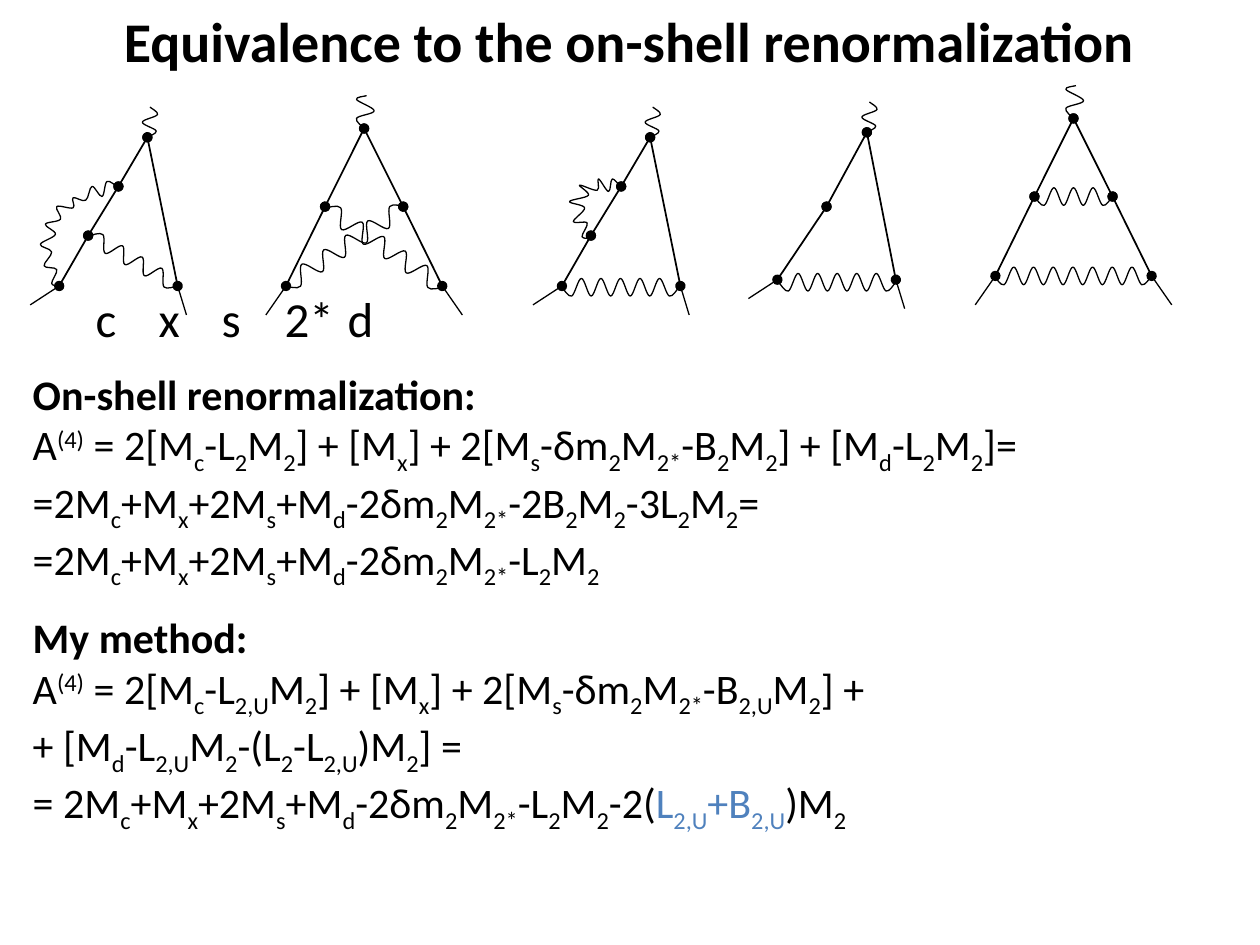
from dataclasses import dataclass
from math import hypot

from lxml import etree
from pptx import Presentation, util as u
from pptx.dml.color import RGBColor
from pptx.enum import shapes, text
from pptx.oxml.ns import qn


@dataclass
class Theme:
    font: str = "Calibri"
    ink: RGBColor = RGBColor(0, 0, 0)
    blue: RGBColor = RGBColor(0x4F, 0x81, 0xBD)
    title: int = 32
    label: int = 28
    body: int = 24
    gap: int = 12
    bold: float = 1
    thin: float = 0.75


def size(x):
    """Turn a drawing unit (one tenth of the slide width) into a length."""
    return u.Cm(2.54 * x)


def add(a, b):
    return a[0] + b[0], a[1] + b[1]


def zigzag(start, end, turns, amp):
    """Turning points of a wave on a straight axis; amp > 0 first turns down."""
    dx, dy = end[0] - start[0], end[1] - start[1]
    span = hypot(dx, dy)
    points = [start]
    for i in range(1, turns + 1):
        t, side = i / (turns + 1), amp if i % 2 else -amp
        points.append((start[0] + t * dx - side * dy / span,
                       start[1] + t * dy + side * dx / span))
    return points + [end]


def bend(shape):
    """Turn the straight segments of a freeform into one smooth curve."""
    geom = shape._element.spPr
    points = [(int(p.get("x")), int(p.get("y"))) for p in geom.iter(qn("a:pt"))]
    ends = [points[0], *points, points[-1]]
    steps = list(geom.iter(qn("a:lnTo")))
    for step, a, b, c, d in zip(steps, ends, ends[1:], ends[2:], ends[3:]):
        step.tag = qn("a:cubicBezTo")
        hints = [[q + (r - p) / 6 for p, q, r in zip(a, b, c)],
                 [q - (r - p) / 6 for p, q, r in zip(b, c, d)]]
        for i, (x, y) in enumerate(hints):
            point = etree.Element(qn("a:pt"), x=str(round(x)), y=str(round(y)))
            step.insert(i, point)


class Deck:
    def __init__(self, theme):
        self.theme = theme
        self.file = Presentation()
        self.file.slide_width, self.file.slide_height = size(10), size(7.5)
        self.slide = self.file.slides.add_slide(self.file.slide_layouts[1])

    def place(self, shape, box, anchor):
        shape.left, shape.top, shape.width, shape.height = map(size, box)
        frame = shape.text_frame
        frame.word_wrap = True
        frame.auto_size = text.MSO_AUTO_SIZE.NONE
        frame.vertical_anchor = anchor
        return frame

    def style(self, run, points, bold=False, color=None):
        font = run.font
        font.name, font.size, font.bold = self.theme.font, u.Pt(points), bold
        font.color.rgb = color or self.theme.ink

    def title(self, words, box):
        frame = self.place(self.slide.shapes.title, box, text.MSO_ANCHOR.MIDDLE)
        frame.text = words
        para = frame.paragraphs[0]
        para.alignment = text.PP_ALIGN.CENTER
        self.style(para.runs[0], self.theme.title, True)

    def body(self, box):
        self.frame = self.place(self.slide.placeholders[1], box,
                                text.MSO_ANCHOR.TOP)
        self.fresh = True

    def para(self, before=0):
        para = self.frame.paragraphs[0] if self.fresh else self.frame.add_paragraph()
        self.fresh = False
        para.space_before = u.Pt(before)
        props = para._p.get_or_add_pPr()
        props.set("marL", "0")
        props.set("indent", "0")
        etree.SubElement(props, qn("a:buNone"))
        return para

    def labels(self, names, stops):
        para = self.para()
        para.text = "".join("\t" + name for name in names)
        self.style(para.runs[0], self.theme.label)
        tabs = etree.SubElement(para._p.pPr, qn("a:tabLst"))
        for stop in stops:
            etree.SubElement(tabs, qn("a:tab"), pos=str(size(stop)), algn="ctr")

    def head(self, words):
        para = self.para(self.theme.gap)
        para.text = words
        self.style(para.runs[0], self.theme.body, True)

    def formula(self, code):
        """Write {x} as a subscript, {^x} as a superscript and |x| in blue."""
        para = self.para()
        for i, part in enumerate(code.split("|")):
            color = self.theme.blue if i % 2 else self.theme.ink
            for j, bit in enumerate(part.replace("}", "{").split("{")):
                if not bit:
                    continue
                run = para.add_run()
                run.text = bit.lstrip("^")
                self.style(run, self.theme.body, color=color)
                if j % 2:
                    base = "30000" if bit[0] == "^" else "-25000"
                    run.font._element.set("baseline", base)

    def stroke(self, shape, width):
        shape.line.color.rgb = self.theme.ink
        shape.line.width = u.Pt(width)

    def line(self, start, end, dots=False):
        link = self.slide.shapes.add_connector(
            shapes.MSO_CONNECTOR.STRAIGHT, *map(size, start + end))
        self.stroke(link, self.theme.bold if dots else self.theme.thin)
        if dots:
            pen = link.line._get_or_add_ln()
            for tip in "a:headEnd", "a:tailEnd":
                etree.SubElement(pen, qn(tip), type="oval")
        etree.SubElement(link._element.spPr, qn("a:effectLst"))

    def wave(self, points):
        turns = [tuple(map(size, p)) for p in points]
        pen = self.slide.shapes.build_freeform(*turns[0])
        pen.add_line_segments(turns[1:], close=False)
        shape = pen.convert_to_shape()
        bend(shape)
        shape.fill.background()
        shape.shadow.inherit = False
        self.stroke(shape, self.theme.thin)

    def graph(self, apex, sides, legs, waves):
        """Draw a vertex diagram; all points are offsets from its apex."""
        for side, leg in zip(sides, legs):
            chain = [apex] + [add(apex, p) for p in side]
            for start, end in zip(chain, chain[1:]):
                self.line(start, end, True)
            self.line(chain[-1], add(chain[-1], leg))
        for points in waves:
            self.wave([add(apex, p) for p in points])


LEAN = [[(-.23, .39), (-.47, .78), (-.7, 1.18)], [(.24, 1.18)]]
STAR = [[(-.32, .59), (-.71, 1.17)], [(.23, 1.17)]]
EVEN = [[(s * .31, .62), (s * .62, 1.25)] for s in (-1, 1)]
SKEW_LEGS = [(-.23, .15), (.07, .23)]
EVEN_LEGS = [(-.16, .23), (.16, .23)]
SKEW_TAIL = [(0, 0), (.07, -.05), (-.04, -.12), (.08, -.18), (.02, -.24)]
EVEN_TAIL = [(0, 0), (-.06, -.08), (.08, -.14), (-.06, -.23), (.02, -.26)]
BASE = zigzag((-.7, 1.19), (.23, 1.19), 11, .07)
OUTER = [(-.7, 1.18), (-.76, 1.16), (-.72, 1.05), (-.82, 1.02), (-.76, .91),
         (-.85, .85), (-.73, .77), (-.81, .69), (-.69, .65), (-.72, .55),
         (-.59, .56), (-.59, .48), (-.49, .5), (-.44, .39), (-.36, .47),
         (-.32, .35), (-.23, .4)]
INNER = [(-.46, .8), (-.54, .79), (-.5, .68), (-.61, .67), (-.52, .56),
         (-.64, .51), (-.49, .46), (-.56, .38), (-.42, .42), (-.41, .33),
         (-.33, .43), (-.3, .33), (-.23, .4)]
GRAPHS = [
    ((1.17, 1.09), LEAN, SKEW_LEGS,
     [SKEW_TAIL, OUTER, zigzag((-.46, .78), (.24, 1.18), 8, -.06)]),
    ((2.89, 1.02), EVEN, EVEN_LEGS,
     [EVEN_TAIL, zigzag((-.31, .63), (.63, 1.26), 10, -.07),
      zigzag((-.63, 1.25), (.33, .62), 10, .07)]),
    ((5.16, 1.09), LEAN, SKEW_LEGS, [SKEW_TAIL, INNER, BASE]),
    ((6.88, 1.05), STAR, SKEW_LEGS, [SKEW_TAIL, BASE]),
    ((8.52, .94), EVEN, EVEN_LEGS,
     [EVEN_TAIL, zigzag((-.31, .62), (.31, .62), 7, .07),
      zigzag((-.63, 1.25), (.62, 1.25), 15, .07)]),
]
PROOFS = {
    "On-shell renormalization:": [
        "A{^(4)} = 2[M{c}-L{2}M{2}] + [M{x}] + 2[M{s}-δm{2}M{2*}-B{2}M{2}] + [M{d}-L{2}M{2}]=",
        "=2M{c}+M{x}+2M{s}+M{d}-2δm{2}M{2*}-2B{2}M{2}-3L{2}M{2}=",
        "=2M{c}+M{x}+2M{s}+M{d}-2δm{2}M{2*}-L{2}M{2}"],
    "My method:": [
        "A{^(4)} = 2[M{c}-L{2,U}M{2}] + [M{x}] + 2[M{s}-δm{2}M{2*}-B{2,U}M{2}] +",
        "+ [M{d}-L{2,U}M{2}-(L{2}-L{2,U})M{2}] =",
        "= 2M{c}+M{x}+2M{s}+M{d}-2δm{2}M{2*}-L{2}M{2}-2(|L{2,U}+B{2,U}|)M{2}"],
}


def main():
    deck = Deck(Theme())
    deck.title("Equivalence to the on-shell renormalization", (.23, 0, 9.53, .64))
    for graph in GRAPHS:
        deck.graph(*graph)
    deck.body((.16, 2.24, 9.69, 4.08))
    deck.labels(["c", "x", "s", "2*", "d"], [.69, 2.61, 4.62, 6.38, 8.18])
    for head, rows in PROOFS.items():
        deck.head(head)
        for row in rows:
            deck.formula(row)
    deck.file.save("out.pptx")


if __name__ == "__main__":
    main()
